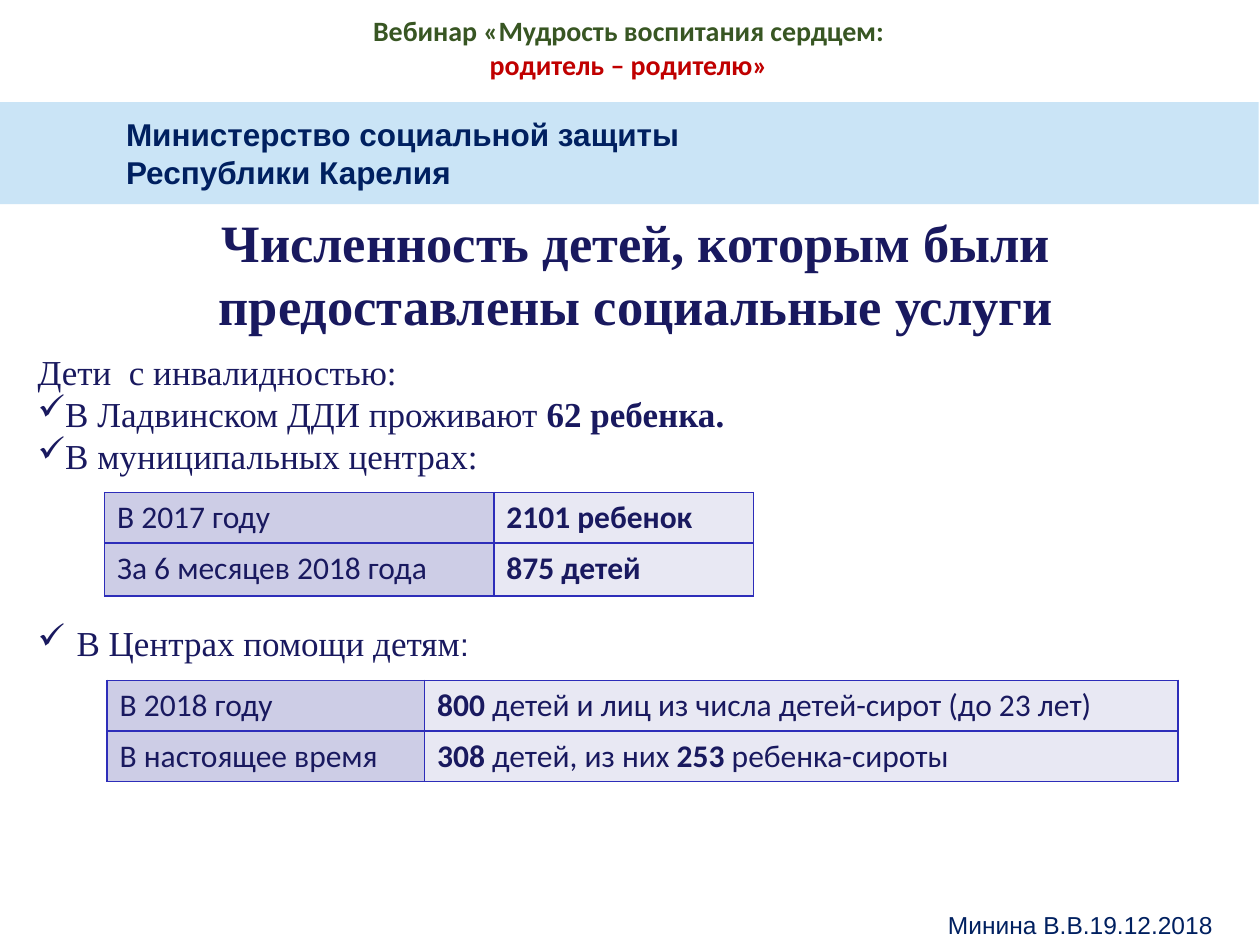
import dataclasses
import typing

import pptx
import pptx.dml.color
import pptx.enum.shapes
import pptx.enum.text
import pptx.oxml
import pptx.oxml.ns
import pptx.util

GRID_COLUMNS, GRID_ROWS = 100, 75
INK, NAVY, GREEN, RED = "19195F", "002060", "385623", "C00000"
BAND, LABEL_FILL, VALUE_FILL, BORDER = "CAE4F6", "CDCDE6", "E8E8F3", "2D2DB9"
SERIF, SANS, BODY = "Times New Roman", "Arial", "Calibri"
ALIGN = pptx.enum.text.PP_ALIGN


class Box(typing.NamedTuple):
    column: float
    row: float
    columns: float
    rows: float


@dataclasses.dataclass
class Run:
    text: str
    bold: bool = False
    font: str = BODY
    size: float = 18
    color: str = INK


@dataclasses.dataclass
class Line:
    runs: list[Run]
    align: typing.Any = ALIGN.LEFT
    bullet: bool = False
    indent: float = 0


@dataclasses.dataclass
class Grid:
    box: Box
    widths: list[float]
    heights: list[float]
    rows: list[list[list[Run]]]


deck = pptx.Presentation()
deck.slide_width = pptx.util.Inches(10)
deck.slide_height = pptx.util.Inches(7.5)
slide = deck.slides.add_slide(deck.slide_layouts[6])


def across(columns: float) -> int:
    return round(deck.slide_width * columns / GRID_COLUMNS)


def down(rows: float) -> int:
    return round(deck.slide_height * rows / GRID_ROWS)


def place(box: Box) -> tuple[int, int, int, int]:
    return across(box.column), down(box.row), across(box.columns), down(box.rows)


def paint(color_format: typing.Any, color: str) -> None:
    color_format.rgb = pptx.dml.color.RGBColor.from_string(color)


def apply(target: typing.Any, values: dict[str, typing.Any]) -> None:
    for key, value in values.items():
        setattr(target, key, value)


def add_bullet(paragraph: typing.Any, indent: float) -> None:
    properties = paragraph._p.get_or_add_pPr()
    properties.set("marL", str(across(indent)))
    properties.set("indent", str(-across(indent)))
    mark = pptx.oxml.parse_xml(f'<a:buChar {pptx.oxml.ns.nsdecls("a")} char="✓"/>')
    properties.append(mark)


def write(frame: typing.Any, lines: list[Line]) -> None:
    for number, line in enumerate(lines):
        paragraph = frame.add_paragraph() if number else frame.paragraphs[0]
        paragraph.alignment = line.align
        if line.bullet:
            add_bullet(paragraph, line.indent)
        for part in line.runs:
            run = paragraph.add_run()
            run.text = part.text
            size = pptx.util.Pt(part.size)
            apply(run.font, {"name": part.font, "size": size, "bold": part.bold})
            paint(run.font.color, part.color)


def add_text(box: Box, lines: list[Line]) -> None:
    frame = slide.shapes.add_textbox(*place(box)).text_frame
    frame.word_wrap = True
    write(frame, lines)


def add_band(box: Box, text_column: float, lines: list[Line]) -> None:
    band = slide.shapes.add_shape(pptx.enum.shapes.MSO_SHAPE.RECTANGLE, *place(box))
    band.shadow.inherit = False
    band.fill.solid()
    paint(band.fill.fore_color, BAND)
    band.line.fill.background()
    apply(band.text_frame, {
        "word_wrap": True,
        "margin_left": across(text_column),
        "vertical_anchor": pptx.enum.text.MSO_ANCHOR.MIDDLE,
    })
    write(band.text_frame, lines)


def add_borders(cell: typing.Any) -> None:
    properties = cell._tc.get_or_add_tcPr()
    for side in ("lnL", "lnR", "lnT", "lnB"):
        properties.append(pptx.oxml.parse_xml(
            f'<a:{side} {pptx.oxml.ns.nsdecls("a")} w="{pptx.util.Pt(1)}">'
            f'<a:solidFill><a:srgbClr val="{BORDER}"/></a:solidFill></a:{side}>'
        ))


def add_grid(grid: Grid) -> None:
    size = len(grid.heights), len(grid.widths)
    table = slide.shapes.add_table(*size, *place(grid.box)).table
    apply(table, {"first_row": False, "horz_banding": False})
    for column, width in zip(table.columns, grid.widths):
        column.width = across(width)
    for row, height, contents in zip(table.rows, grid.heights, grid.rows):
        row.height = down(height)
        for cell, runs, fill in zip(row.cells, contents, (LABEL_FILL, VALUE_FILL)):
            add_borders(cell)
            cell.fill.solid()
            paint(cell.fill.fore_color, fill)
            write(cell.text_frame, [Line(runs)])


def serif(text: str, bold: bool = False, size: float = 20) -> Run:
    return Run(text, bold, SERIF, size)


def heading(text: str, color: str) -> Line:
    return Line([Run(text, True, BODY, 16, color)], ALIGN.CENTER)


def ministry(text: str) -> Line:
    return Line([Run(text, True, SANS, 18, NAVY)])


municipal_centres = Grid(
    Box(8.3, 39.1, 51.5, 8.2), [30.9, 20.6], [4, 4.2],
    [
        [[Run("В 2017 году")], [Run("2101 ребенок", True)]],
        [[Run("За 6 месяцев 2018 года")], [Run("875 детей", True)]],
    ],
)
help_centres = Grid(
    Box(8.5, 54, 85, 8), [25.2, 59.8], [4, 4],
    [
        [[Run("В 2018 году")],
         [Run("800", True), Run(" детей и лиц из числа детей-сирот (до 23 лет)")]],
        [[Run("В настоящее время")],
         [Run("308 ", True), Run("детей, из них "), Run("253", True),
          Run(" ребенка-сироты")]],
    ],
)

add_text(Box(12.1, 16.2, 76.8, 11.1), [
    Line([serif("Численность детей, которым были предоставлены социальные услуги",
                True, 30)], ALIGN.CENTER),
])
add_grid(municipal_centres)
add_text(Box(2, 27.3, 94.5, 11.1), [
    Line([serif("Дети  с инвалидностью:")]),
    Line([serif("В Ладвинском ДДИ проживают "), serif("62 ребенка.", True)], bullet=True),
    Line([serif("В муниципальных центрах:")], bullet=True),
])
add_text(Box(2, 48.8, 98, 4.4), [
    Line([serif("В Центрах помощи детям"), Run(":", font=SANS)], bullet=True, indent=3.1),
])
add_grid(help_centres)
add_text(Box(1, 0.6, 97.8, 6.4), [
    heading("Вебинар «Мудрость воспитания сердцем:", GREEN),
    heading("родитель – родителю»", RED),
])
add_text(Box(71.5, 71.7, 28.5, 3.3), [
    Line([Run("Минина В.В.19.12.2018", font=SANS, size=14, color=NAVY)], ALIGN.CENTER),
])
add_band(Box(0, 8.1, 99.9, 8.1), 10, [
    ministry("Министерство социальной защиты"),
    ministry("Республики Карелия"),
])

deck.save("out.pptx")
